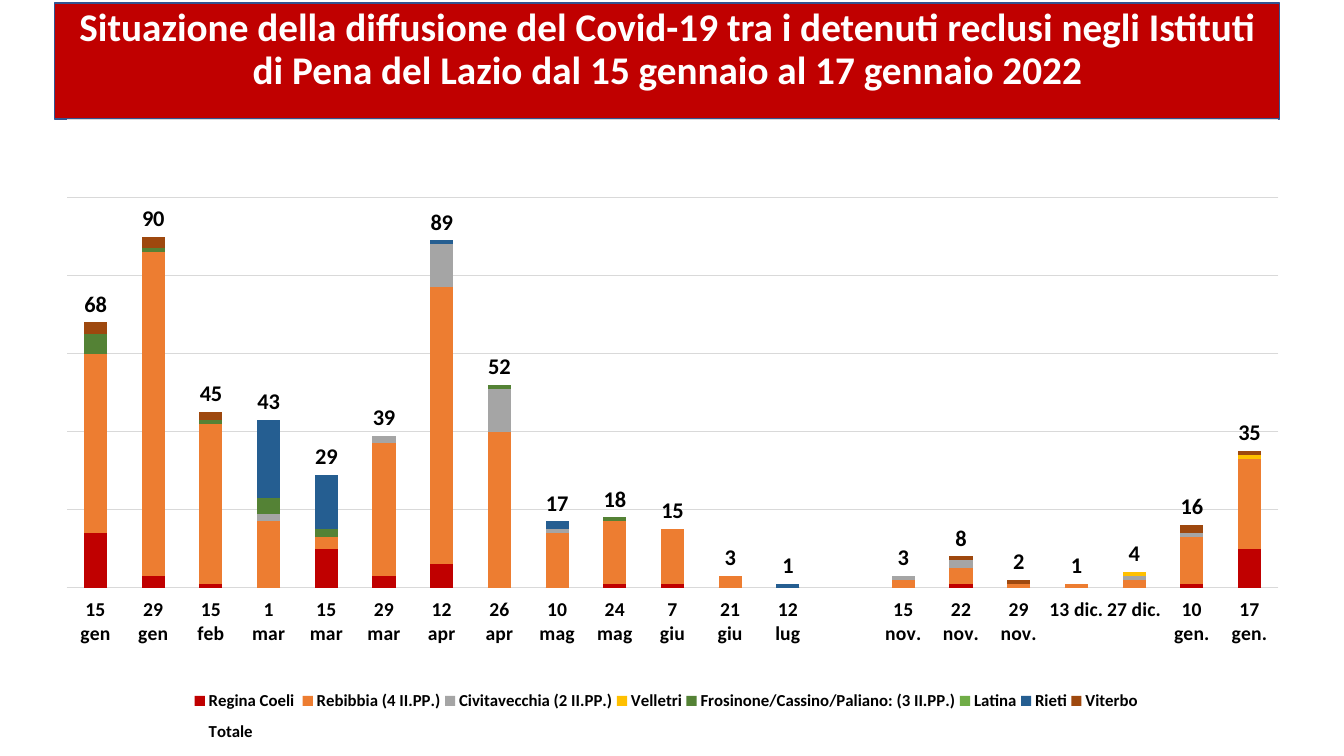
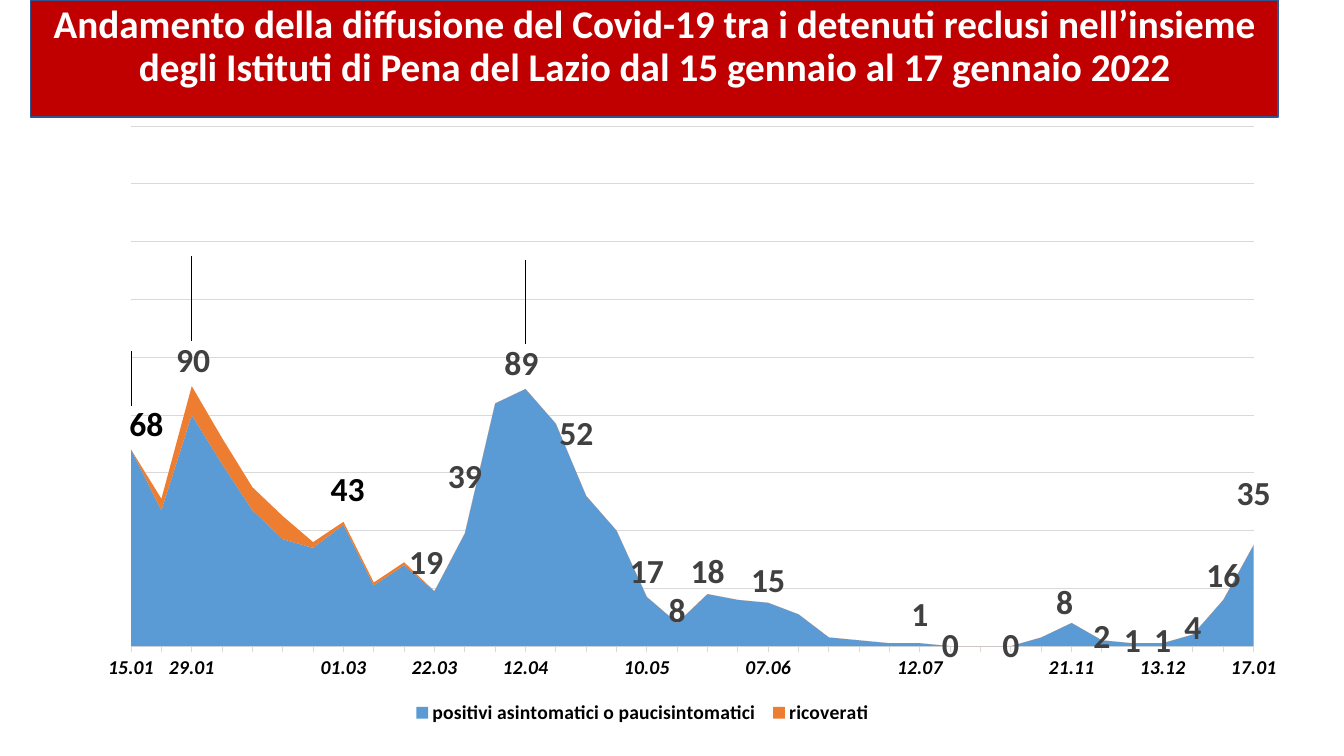
from dataclasses import dataclass

from lxml.etree import Element, SubElement
from pptx import Presentation
from pptx.chart.data import CategoryChartData
from pptx.dml.color import RGBColor
from pptx.enum.chart import XL_CHART_TYPE as ChartType
from pptx.enum.chart import XL_LABEL_POSITION as LabelPosition
from pptx.enum.chart import XL_LEGEND_POSITION as LegendPosition
from pptx.enum.chart import XL_TICK_LABEL_POSITION as TickLabelPosition
from pptx.enum.chart import XL_TICK_MARK as TickMark
from pptx.enum.text import MSO_ANCHOR as Anchor
from pptx.enum.text import MSO_AUTO_SIZE as AutoSize
from pptx.enum.text import PP_ALIGN as Align
from pptx.oxml.ns import qn
from pptx.util import Pt


@dataclass(frozen=True)
class Theme:
    font: str = "Calibri"
    red: str = "C00000"
    border: str = "325491"
    white: str = "FFFFFF"
    black: str = "000000"
    dark_gray: str = "404040"
    grid: str = "D9D9D9"
    orange: str = "ED7D31"
    gray: str = "A5A5A5"
    yellow: str = "FFC000"
    dark_green: str = "548235"
    green: str = "70AD47"
    dark_blue: str = "255E91"
    blue: str = "5B9BD5"
    brown: str = "9E480E"
    title_size: int = 28
    axis_size: int = 14
    column_label_size: int = 16
    area_label_size: int = 24


theme = Theme()


def write_text(frame, text, *, size, color, bold=False, align=Align.LEFT, spacing=1.0):
    frame.text = text
    paragraph = frame.paragraphs[0]
    paragraph.alignment = align
    paragraph.line_spacing = spacing
    font = paragraph.runs[0].font
    font.name = theme.font
    font.size = Pt(size)
    font.bold = bold
    font.color.rgb = RGBColor.from_string(color)


def set_layout(parent, index, **values):
    """Give a chart part a manual layout, as child number index."""
    for old_layout in parent.findall(qn("c:layout")):
        parent.remove(old_layout)
    layout = Element(qn("c:layout"))
    manual = SubElement(layout, qn("c:manualLayout"))
    for name, value in values.items():
        SubElement(manual, qn(f"c:{name}")).set("val", str(value))
    parent.insert(index, layout)


column_categories = [
    "15\ngen", "29\ngen", "15\nfeb", "1\nmar", "15\nmar", "29\nmar", "12\napr",
    "26\napr", "10\nmag", "24\nmag", "7\ngiu", "21\ngiu", "12\nlug", "",
    "15 nov.", "22 nov.", "29 nov.", "13 dic.", "27 dic.", "10 gen.", "17 gen.",
]
column_series = [
    ("Regina Coeli ", theme.red,
     [14, 3, 1, 0, 10, 3, 6, 0, 0, 1, 1, 0, 0, None, 0, 1, 0, 0, 0, 1, 10]),
    ("Rebibbia (4 II.PP.)", theme.orange,
     [46, 83, 41, 17, 3, 34, 71, 40, 14, 16, 14, 3, 0, None, 2, 4, 1, 1, 2, 12, 23]),
    ("Civitavecchia (2 II.PP.)", theme.gray,
     [0, 0, 0, 2, 0, 2, 11, 11, 1, 0, 0, 0, 0, None, 1, 2, 0, None, 1, 1, 0]),
    ("Velletri", theme.yellow,
     [0] * 13 + [None, 0, 0, 0, 0, 1, 0, 1]),
    ("Frosinone/Cassino/Paliano: (3 II.PP.)", theme.dark_green,
     [5, 1, 1, 4, 2, 0, 0, 1, 0, 1, 0, 0, 0, None] + [0] * 7),
    ("Latina", theme.green, [0] * 13 + [None] + [0] * 7),
    ("Rieti", theme.dark_blue,
     [0, 0, 0, 20, 14, 0, 1, 0, 2, 0, 0, 0, 1, None] + [0] * 7),
    ("Viterbo", theme.brown,
     [3, 3, 2] + [0] * 10 + [None, 0, 1, 1, 0, 0, 2, 1]),
    ("Totale", None,
     [68, 90, 45, 43, 29, 39, 89, 52, 17, 18, 15, 3, 1, None, 3, 8, 2, 1, 4, 16, 35]),
]

area_dates = {
    0: "15.01", 2: "29.01", 7: "01.03", 10: "22.03", 13: "12.04", 17: "10.05",
    21: "07.06", 26: "12.07", 31: "21.11", 34: "13.12", 37: "17.01",
}
area_series = [
    ("positivi asintomatici o paucisintomatici", theme.blue,
     [68, 47, 80, 63, 47, 37, 34, 42, 21, 28, 19, 39, 84, 89, 77, 52, 40, 17, 8, 18,
      16, 15, 11, 3, 2, 1, 1, 0, 0, 0, 3, 8, 2, 1, 1, 4, 16, 35]),
    ("ricoverati", theme.orange,
     [0, 4, 10, 9, 8, 8, 2, 1, 1, 1, 0, 0] + [None] * 26),
    ("totale", None,
     [68, 51, 90, 72, 55, 45, 36, 43, 22, 29, 19, 39, 84, 89, 77, 52, 40, 17, 8, 18,
      16, 15, 11, 3, 2, 1, 1, 0, 0, 0, 0, 8, 2, 1, 1, 4, 16, 35]),
]
labelled_points = [0, 2, 7, 10, 11, 13, 15, 17, 18, 19, 21, 26, 27, 29, *range(31, 38)]
black_points = (0, 7)
label_shifts = {  # points to the right and down
    0: (11, 53), 2: (1, 75), 7: (3, 22), 10: (-6, 0), 13: (-3, 74),
    15: (-7, 10), 19: (0, 3), 26: (0, -19), 31: (-5, -6),
}

slide_specs = [
    dict(
        title="Situazione della diffusione del Covid-19 tra i detenuti reclusi negli "
              "Istituti di Pena del Lazio dal 15 gennaio al 17 gennaio 2022",
        title_box=(39, 2, 875, 83),
        chart_box=(30, 76, 883.5, 471),
        chart_type=ChartType.COLUMN_STACKED,
        categories=column_categories,
        series=column_series,
        maximum=120,
        tick_mark=TickMark.NONE,
        italic=False,
        legend_size=12,
        plot_layout=dict(x=0.02, y=0.02, w=0.98, h=0.71),
        legend_layout=dict(x=0.12, y=0.87, w=0.77, h=0.11),
    ),
    dict(
        title="Andamento della diffusione del Covid-19 tra i detenuti reclusi nell’insieme "
              "degli Istituti di Pena del Lazio dal 15 gennaio al 17 gennaio 2022",
        title_box=(22, 0, 891, 83.5),
        chart_box=(58, 72, 891, 453),
        chart_type=ChartType.AREA_STACKED,
        categories=[area_dates.get(index, "") for index in range(38)],
        series=area_series,
        maximum=180,
        tick_mark=TickMark.OUTSIDE,
        italic=True,
        legend_size=14,
        plot_layout=dict(x=0.04, y=0.04, w=0.9, h=0.82),
        legend_layout=dict(x=0.26, y=0.94, w=0.38, h=0.05),
    ),
]

presentation = Presentation()
presentation.slide_width = Pt(960)
presentation.slide_height = Pt(540)
title_only = presentation.slide_layouts[5]

for spec_values in slide_specs:
    slide = presentation.slides.add_slide(title_only)

    title = slide.shapes.title
    title.left, title.top, title.width, title.height = map(Pt, spec_values["title_box"])
    title.fill.solid()
    title.fill.fore_color.rgb = RGBColor.from_string(theme.red)
    title.line.color.rgb = RGBColor.from_string(theme.border)
    title.line.width = Pt(1)
    frame = title.text_frame
    frame.word_wrap = True
    frame.auto_size = AutoSize.NONE
    frame.vertical_anchor = Anchor.TOP
    write_text(frame, spec_values["title"], size=theme.title_size, color=theme.white,
               bold=True, align=Align.CENTER, spacing=0.9)

    chart_data = CategoryChartData()
    chart_data.categories = spec_values["categories"]
    for name, _, values in spec_values["series"]:
        chart_data.add_series(name, values)
    chart_box = [Pt(length) for length in spec_values["chart_box"]]
    chart = slide.shapes.add_chart(spec_values["chart_type"], *chart_box, chart_data).chart
    chart.has_title = False
    background = Element(qn("c:spPr"))
    SubElement(background, qn("a:noFill"))
    SubElement(SubElement(background, qn("a:ln")), qn("a:noFill"))
    chart._chartSpace.find(qn("c:chart")).addnext(background)

    plot = chart.plots[0]
    plot.vary_by_categories = False
    for series, (_, color, _) in zip(plot.series, spec_values["series"]):
        series.format.line.fill.background()
        if color:
            series.format.fill.solid()
            series.format.fill.fore_color.rgb = RGBColor.from_string(color)
        else:
            series.format.fill.background()

    category_axis = chart.category_axis
    category_axis.has_major_gridlines = False
    category_axis.major_tick_mark = spec_values["tick_mark"]
    category_axis.minor_tick_mark = TickMark.NONE
    category_axis.tick_label_position = TickLabelPosition.LOW
    skip = Element(qn("c:tickLblSkip"))
    skip.set("val", "1")
    category_axis._element.find(qn("c:noMultiLvlLbl")).addprevious(skip)

    value_axis = chart.value_axis
    value_axis.minimum_scale = 0
    value_axis.maximum_scale = spec_values["maximum"]
    value_axis.major_unit = 20
    value_axis.has_major_gridlines = True
    value_axis.visible = False
    for line in (category_axis.format.line, value_axis.major_gridlines.format.line):
        line.color.rgb = RGBColor.from_string(theme.grid)
        line.width = Pt(0.75)

    chart.has_legend = True
    legend = chart.legend
    legend.position = LegendPosition.BOTTOM
    legend.include_in_layout = False
    legend_index = 1

    fonts = [
        (chart.font, 10, theme.black, False),
        (category_axis.tick_labels.font, theme.axis_size, theme.black, True),
        (legend.font, spec_values["legend_size"], theme.black, True),
    ]
    total = plot.series[-1]
    total_labels = total.data_labels
    if spec_values["chart_type"] == ChartType.COLUMN_STACKED:
        plot.gap_width = 150
        plot.overlap = 100
        total_labels.show_value = True
        total_labels.position = LabelPosition.INSIDE_BASE
        fonts.append((total_labels.font, theme.column_label_size, theme.black, True))
    else:
        value_axis._element.find(qn("c:crossBetween")).set("val", "midCat")
        total_labels.show_value = False
        for index in labelled_points:
            color = theme.black if index in black_points else theme.dark_gray
            label_font = total.points[index].data_label.font
            fonts.append((label_font, theme.area_label_size, color, True))
        for label in total_labels._element.findall(qn("c:dLbl")):
            index = int(label.find(qn("c:idx")).get("val"))
            if index in label_shifts:
                right, down = label_shifts[index]
                set_layout(label, 1, x=Pt(right) / chart_box[2], y=Pt(down) / chart_box[3])
        hidden_entry = Element(qn("c:legendEntry"))
        SubElement(hidden_entry, qn("c:idx")).set("val", str(len(plot.series) - 1))
        SubElement(hidden_entry, qn("c:delete")).set("val", "1")
        legend._element.insert(legend_index, hidden_entry)
        legend_index += 1

    for font, size, color, bold in fonts:
        font.name = theme.font
        font.size = Pt(size)
        font.bold = bold
        font.color.rgb = RGBColor.from_string(color)
    category_axis.tick_labels.font.italic = spec_values["italic"]

    plot_area = chart._chartSpace.find(qn("c:chart")).find(qn("c:plotArea"))
    set_layout(plot_area, 0, layoutTarget="inner", xMode="edge", yMode="edge",
               **spec_values["plot_layout"])
    set_layout(legend._element, legend_index, xMode="edge", yMode="edge",
               **spec_values["legend_layout"])

presentation.save("out.pptx")
